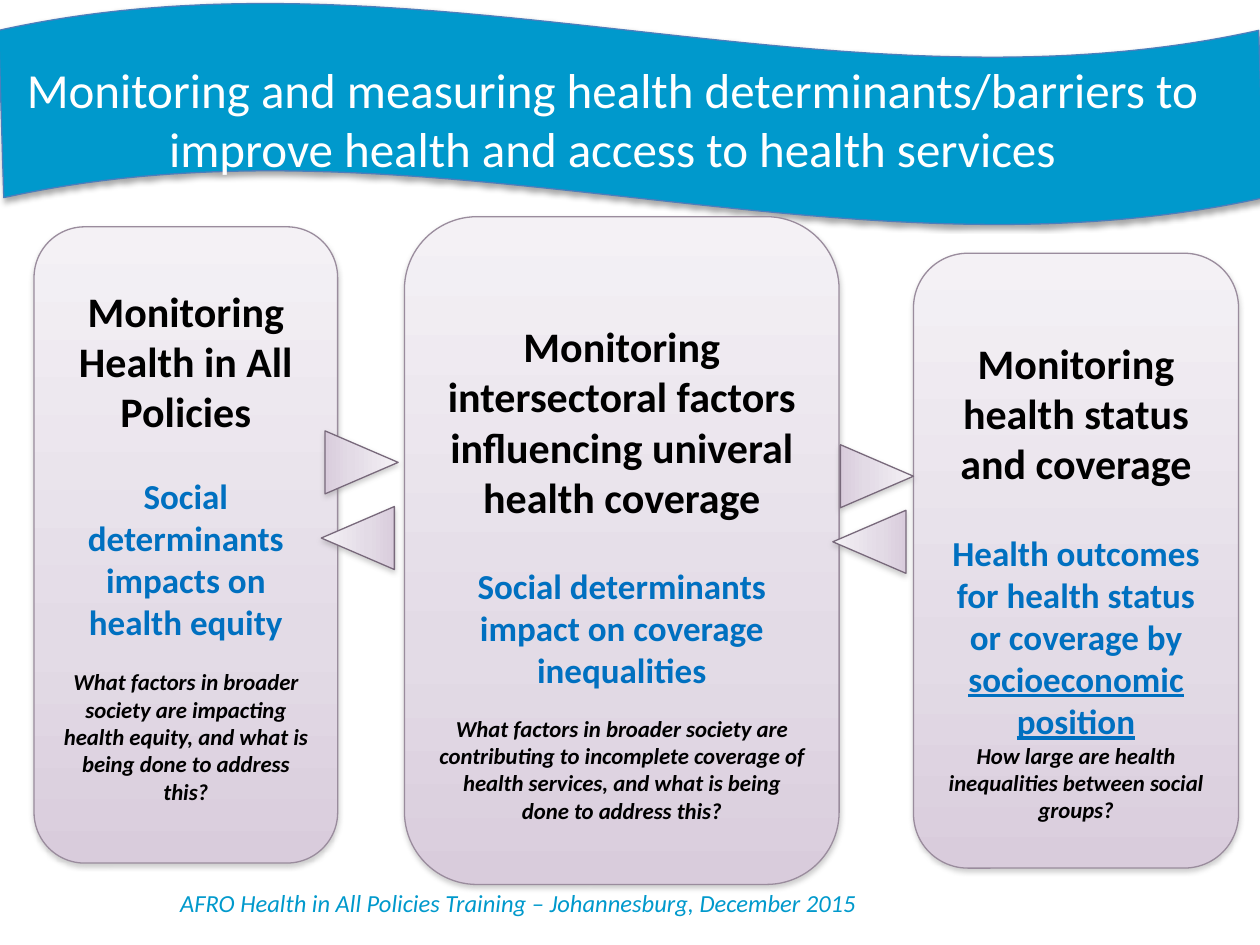
import copy
import pptx
import pptx.util
import pptx.dml.color
import pptx.enum.shapes
import pptx.enum.text
import pptx.oxml
import pptx.oxml.ns
import lxml.etree

Inches = pptx.util.Inches
Pt = pptx.util.Pt
RGB = pptx.dml.color.RGBColor.from_string
qn = pptx.oxml.ns.qn
Kind = pptx.enum.shapes.MSO_SHAPE
Align = pptx.enum.text.PP_ALIGN
Anchor = pptx.enum.text.MSO_ANCHOR
Fit = pptx.enum.text.MSO_AUTO_SIZE

theme = {
    "band": "0099CC", "rim": "4B7EBC", "edge": "9A8C9D", "tip": "78697B",
    "fade": [(0, "F4F1F5"), (0.65, "E3DBE6"), (1, "D9CCDC")],
    "title": {"size": 28, "color": "FFFFFF"},
    "foot": {"size": 14, "color": "0099CC", "italic": True},
    "head": {"size": 24, "color": "000000", "bold": True},
    "topic": {"size": 20, "color": "0070C0", "bold": True},
    "mark": {"size": 20, "color": "0070C0", "bold": True, "underline": True},
    "ask": {"size": 13, "color": "000000", "bold": True, "italic": True},
}


def write(frame, paras, form):
    frame.word_wrap = True
    frame.auto_size = Fit.NONE
    for key, val in form.items():
        setattr(frame, key, val)
    for num, (gap, runs) in enumerate(paras):
        para = frame.paragraphs[0] if num == 0 else frame.add_paragraph()
        para.alignment = Align.CENTER
        para.space_before = Pt(gap)
        for look, text in runs:
            run = para.add_run()
            run.text = text
            run.font.name = "Calibri"
            for key, val in theme[look].items():
                if key == "color":
                    run.font.color.rgb = RGB(val)
                else:
                    setattr(run.font, key, Pt(val) if key == "size" else val)


def draw(kind, box, fill, line, shade):
    shape = slide.shapes.add_shape(kind, *map(Inches, box))
    if isinstance(fill, str):
        shape.fill.solid()
        shape.fill.fore_color.rgb = RGB(fill)
    else:
        shape.fill.gradient()
        shape.fill.gradient_angle = 270
        stops = shape.element.spPr.find(".//" + qn("a:gsLst"))
        stops.insert(1, copy.deepcopy(stops[0]))
        for stop, (place, color) in zip(shape.fill.gradient_stops, fill):
            stop.position = place
            stop.color.rgb = RGB(color)
    shape.line.color.rgb = RGB(line)
    shape.line.width = Pt(0.75)
    shape.shadow.inherit = False
    color, alpha, drop = shade
    glow = lxml.etree.SubElement(
        shape.element.spPr.find(qn("a:effectLst")), qn("a:outerShdw"),
        blurRad=str(Pt(3.1)), dist=str(Pt(drop)), dir="5400000", rotWithShape="0")
    tone = lxml.etree.SubElement(glow, qn("a:srgbClr"), val=color)
    lxml.etree.SubElement(tone, qn("a:alpha"), val=str(alpha * 1000))
    return shape


deck = pptx.Presentation()
deck.slide_width = Inches(10)
deck.slide_height = Inches(7.5)
slide = deck.slides.add_slide(deck.slide_layouts[5])

foot = slide.shapes.add_textbox(*map(Inches, (0.08, 7, 8.07, 0.34)))
write(foot.text_frame, [
    (0, [("foot", "AFRO Health in All Policies Training – Johannesburg, December 2015")]),
], {})

wave = draw(Kind.WAVE, (-0.01, 0.02, 10.04, 1.77), theme["band"], theme["rim"],
            ("000000", 35, 1.8))
wave.adjustments[0] = 0.125
wave.adjustments[1] = 0.002

soft = ("808080", 38, 1.6)
cards = [
    ((0.27, 1.8, 2.41, 5.05), (0.05, 0.05), [
        (0, [("head", "Monitoring Health in All Policies")]),
        (22, [("topic", "Social determinants impacts on health equity")]),
        (14.5, [("ask", "What factors in broader society are impacting health equity, "
                 "and what is being done to address this?")]),
    ]),
    ((3.21, 1.72, 3.45, 5.3), (0.73, 0.39), [
        (0, [("head", "Monitoring intersectoral factors influencing univeral "
              "health coverage")]),
        (24.5, [("topic", "Social determinants impact on coverage inequalities")]),
        (13.5, [("ask", "What factors in broader society are contributing to incomplete "
                 "coverage of health services, and what is being done to address this?")]),
    ]),
    ((7.25, 2.01, 2.58, 4.88), (0.36, 0.05), [
        (0, [("head", "Monitoring health status and coverage")]),
        (24.5, [("topic", "Health outcomes for health status or coverage by "),
                ("mark", "socioeconomic position")]),
        (0, [("ask", "How large are health inequalities between social groups?")]),
    ]),
]
for box, (top, base), paras in cards:
    card = draw(Kind.ROUNDED_RECTANGLE, box, theme["fade"], theme["edge"], soft)
    card.adjustments[0] = 0.167
    write(card.text_frame, paras, {
        "vertical_anchor": Anchor.MIDDLE,
        "margin_top": Inches(top), "margin_bottom": Inches(base),
    })

title = slide.shapes.title
spot = {"left": 0.01, "top": 0.42, "width": 9.7, "height": 1.04}
for key, val in spot.items():
    setattr(title, key, Inches(val))
write(title.text_frame, [
    (0, [("title", "Monitoring and measuring health determinants/barriers to improve "
          "health and access to health services")]),
], {"vertical_anchor": Anchor.TOP})
title.element.getparent().append(title.element)

for left, top, turn in [(2.62, 3.38, 90), (6.71, 3.49, 90),
                        (2.59, 3.98, 270), (6.65, 4.01, 270)]:
    arrow = draw(Kind.ISOSCELES_TRIANGLE, (left, top, 0.5, 0.58),
                 theme["fade"], theme["tip"], soft)
    arrow.rotation = turn

deck.save("out.pptx")
